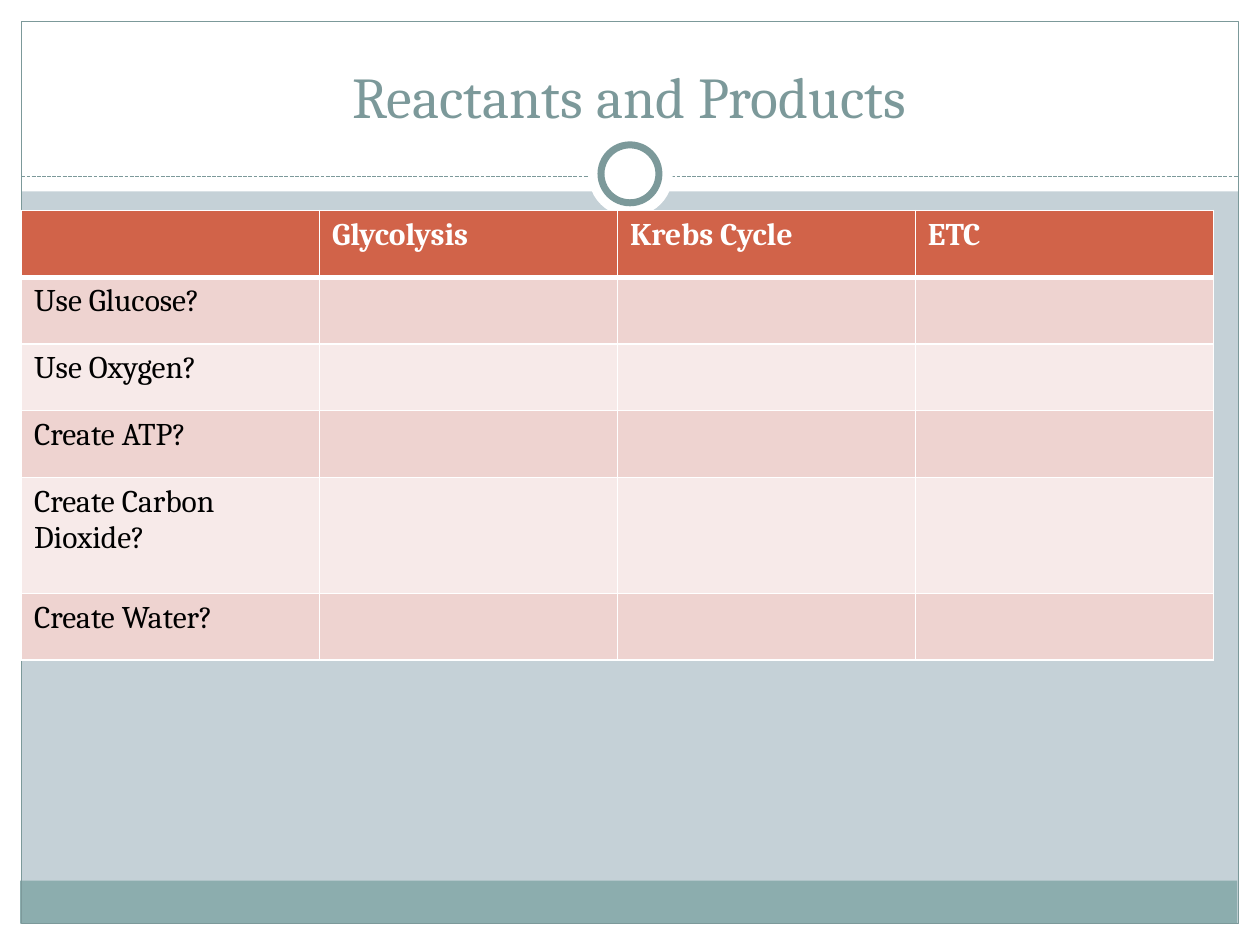
from dataclasses import dataclass

from lxml import etree
from pptx import Presentation
from pptx.dml.color import RGBColor
from pptx.enum.dml import MSO_LINE
from pptx.enum.shapes import MSO_CONNECTOR, MSO_SHAPE
from pptx.enum.text import MSO_ANCHOR, PP_ALIGN
from pptx.oxml.ns import qn
from pptx.util import Inches, Pt

RECTANGLE = MSO_SHAPE.RECTANGLE
OVAL = MSO_SHAPE.OVAL
STRAIGHT = MSO_CONNECTOR.STRAIGHT
DASH = MSO_LINE.SQUARE_DOT
BOTTOM = MSO_ANCHOR.BOTTOM
CENTER = PP_ALIGN.CENTER
TITLE_ONLY = 5


@dataclass(frozen=True)
class Theme:
    font: str = "Cambria"
    background: str = "C5D1D7"
    white: str = "FFFFFF"
    black: str = "000000"
    accent: str = "7C999A"
    footer: str = "8CADAE"
    header: str = "D16349"
    bands: tuple = ("EED3D0", "F7EAE9")
    title_size: int = 33
    body_size: int = 18
    thin: float = 0.75
    ring: int = 4
    grid: int = 1
    header_rule: int = 3


class SlideBuilder:
    def __init__(self, page, theme):
        self.page = page
        self.theme = theme
        self.paint(page.background.fill, theme.background)

    def paint(self, fill, color):
        fill.solid()
        fill.fore_color.rgb = RGBColor.from_string(color)

    def format_text(self, span, size, color, bold=False):
        values = {"name": self.theme.font, "size": Pt(size), "bold": bold}
        for name, value in values.items():
            setattr(span.font, name, value)
        span.font.color.rgb = RGBColor.from_string(color)

    def shape(self, kind, place, fill=None, line=None, width=0):
        box = self.page.shapes.add_shape(kind, *map(Inches, place))
        box.shadow.inherit = False
        if fill:
            self.paint(box.fill, fill)
        else:
            box.fill.background()
        if line:
            self.paint(box.line.fill, line)
            box.line.width = Pt(width)
        else:
            box.line.fill.background()

    def dashed_line(self, start, end):
        rule = self.page.shapes.add_connector(STRAIGHT, *map(Inches, start + end))
        self.paint(rule.line.fill, self.theme.accent)
        rule.line.width = Pt(self.theme.thin)
        rule.line.dash_style = DASH
        etree.SubElement(rule.element.spPr, qn("a:effectLst"))

    def title(self, text, place):
        title = self.page.shapes.title
        self.page.shapes.element.append(title.element)
        for name, value in zip(("left", "top", "width", "height"), place):
            setattr(title, name, Inches(value))
        frame = title.text_frame
        frame.word_wrap = True
        frame.vertical_anchor = BOTTOM
        para = frame.paragraphs[0]
        para.alignment = CENTER
        span = para.add_run()
        span.text = text
        self.format_text(span, self.theme.title_size, self.theme.accent)

    def cell_borders(self, cell, widths):
        properties = cell._tc.get_or_add_tcPr()
        for position, (side, width) in enumerate(widths.items()):
            line = etree.Element(qn(f"a:{side}"), w=str(Pt(width)))
            fill = etree.SubElement(line, qn("a:solidFill"))
            etree.SubElement(fill, qn("a:srgbClr"), val=self.theme.white)
            properties.insert(position, line)

    def table(self, rows, place, heights):
        theme = self.theme
        frame = self.page.shapes.add_table(len(rows), len(rows[0]), *map(Inches, place))
        table = frame.table
        for row, height in zip(table.rows, heights):
            row.height = Inches(height)
        for row_index, texts in enumerate(rows):
            is_header = row_index == 0
            fill = theme.header if is_header else theme.bands[(row_index - 1) % 2]
            color = theme.white if is_header else theme.black
            widths = {
                "lnL": theme.grid,
                "lnR": theme.grid,
                "lnT": theme.header_rule if row_index == 1 else theme.grid,
                "lnB": theme.header_rule if is_header else theme.grid,
            }
            for column_index, text in enumerate(texts):
                cell = table.cell(row_index, column_index)
                self.paint(cell.fill, fill)
                self.cell_borders(cell, widths)
                if text:
                    span = cell.text_frame.paragraphs[0].add_run()
                    span.text = text
                    self.format_text(span, theme.body_size, color, is_header)


def main():
    theme = Theme()
    deck = Presentation()
    deck.slide_width = Inches(10)
    deck.slide_height = Inches(7.5)
    page = deck.slides.add_slide(deck.slide_layouts[TITLE_ONLY])
    builder = SlideBuilder(page, theme)

    margins = [
        (0, 7.33, 10, 0.17),
        (0, 0, 10, 1.52),
        (0, 0, 0.17, 7.5),
        (9.83, 0, 0.17, 7.5),
    ]
    for place in margins:
        builder.shape(RECTANGLE, place, theme.white)
    builder.shape(RECTANGLE, (0.16, 6.99, 9.66, 0.34), theme.footer)
    builder.shape(RECTANGLE, (0.17, 0.17, 9.66, 7.16), line=theme.accent, width=theme.thin)
    builder.dashed_line((0.17, 1.4), (9.83, 1.4))
    builder.shape(OVAL, (4.67, 1.05, 0.67, 0.67), theme.white)
    builder.shape(OVAL, (4.77, 1.15, 0.46, 0.46), theme.white, theme.accent, theme.ring)
    builder.title("Reactants and Products", (0.33, 0.25, 9.33, 0.83))

    questions = [
        "Use Glucose?",
        "Use Oxygen?",
        "Create ATP?",
        "Create Carbon Dioxide?",
        "Create Water?",
    ]
    rows = [["", "Glycolysis", "Krebs Cycle", "ETC"]]
    rows += [[question, "", "", ""] for question in questions]
    heights = [0.53, 0.53, 0.53, 0.53, 0.92, 0.53]
    builder.table(rows, (0.17, 1.67, 9.46, sum(heights)), heights)
    deck.save("out.pptx")


if __name__ == "__main__":
    main()
